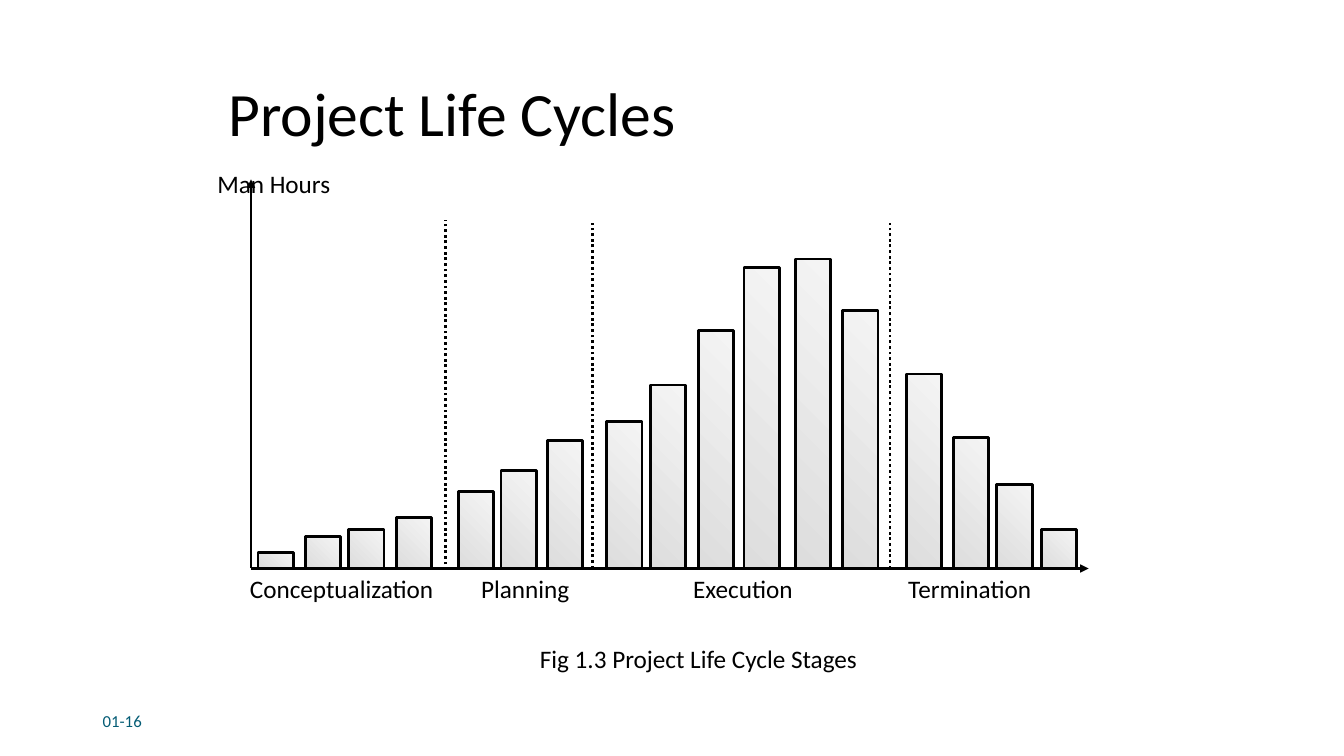
from lxml import etree
from pptx import Presentation
from pptx import util as u
from pptx.dml.color import RGBColor
from pptx.enum import dml, shapes, text
from pptx.oxml.ns import qn

COLORS = {"ink": "000000", "number": "045C75", "dark": "DDDDDD", "light": "F4F4F4"}
COLUMNS, ROWS = 40, 22.5
BASE = 16.92
AXIS_X, AXIS_END, AXIS_TOP = 7.47, 32.4, 5.34
BAR_WIDTH = 1.05
LEFT, CENTER = text.PP_ALIGN.LEFT, text.PP_ALIGN.CENTER

STAGES = [
    ("Conceptualization", 7.14, LEFT,
     [(7.68, 0.48), (9.09, 0.96), (10.38, 1.17), (11.79, 1.53)]),
    ("Planning", 12.33, CENTER,
     [(13.65, 2.28), (14.91, 2.91), (16.29, 3.8)]),
    ("Execution", 18.81, CENTER,
     [(18.06, 4.38), (19.35, 5.46), (20.79, 7.08),
      (22.14, 8.97), (23.67, 9.21), (25.08, 7.68)]),
    ("Termination", 25.56, CENTER,
     [(26.97, 5.79), (28.38, 3.9), (29.67, 2.49), (30.99, 1.17)]),
]
DIVIDERS = [(13.26, 16.8, 6.54), (17.64, BASE, 6.63), (26.49, BASE, 6.63)]


class Deck:
    """Draws styled elements on a slide, with lengths in grid columns and rows."""

    def __init__(self, font="Calibri", line_width=2):
        self.prs = Presentation()
        self.prs.slide_width, self.prs.slide_height = u.Inches(13.33), u.Inches(7.5)
        self.font, self.line_width = font, u.Pt(line_width)
        self.s = self.prs.slides.add_slide(self.prs.slide_layouts[6])

    def color(self, name):
        return RGBColor.from_string(COLORS[name])

    def grid(self, *lengths):
        cells = (self.prs.slide_width / COLUMNS, self.prs.slide_height / ROWS)
        return [round(n * cells[i % 2]) for i, n in enumerate(lengths)]

    def outline(self, sp):
        sp.line.color.rgb = self.color("ink")
        sp.line.width = self.line_width

    def label(self, words, x, y, w=6.6, h=1.2, size=18, color="ink",
              align=LEFT, anchor=text.MSO_ANCHOR.TOP, spacing=1.0):
        tf = self.s.shapes.add_textbox(*self.grid(x, y, w, h)).text_frame
        tf.word_wrap = True
        tf.vertical_anchor = anchor
        p = tf.paragraphs[0]
        p.text, p.alignment, p.line_spacing = words, align, spacing
        p.font.name, p.font.size = self.font, u.Pt(size)
        p.font.color.rgb = self.color(color)

    def line(self, x1, y1, x2, y2, arrow=False, dash=None):
        sp = self.s.shapes.add_connector(
            shapes.MSO_CONNECTOR.STRAIGHT, *self.grid(x1, y1, x2, y2))
        self.outline(sp)
        if dash:
            sp.line.dash_style = dash
        if arrow:
            etree.SubElement(sp.line._get_or_add_ln(), qn("a:tailEnd"), type="triangle")
        etree.SubElement(sp._element.spPr, qn("a:effectLst"))

    def bar(self, x, height):
        sp = self.s.shapes.add_shape(
            shapes.MSO_SHAPE.RECTANGLE,
            *self.grid(x, BASE - height, BAR_WIDTH, height))
        sp.shadow.inherit = False
        sp.fill.gradient()
        sp.fill.gradient_angle = 45
        for stop, name in zip(sp.fill.gradient_stops, ("dark", "light")):
            stop.color.rgb = self.color(name)
        self.outline(sp)


def main():
    deck = Deck()
    middle = text.MSO_ANCHOR.MIDDLE
    deck.label("Project Life Cycles", 6.5, 2, 27, 2.95, size=44,
               anchor=middle, spacing=0.9)
    deck.label("Man Hours", 6.17, 4.86)
    deck.line(AXIS_X, BASE, AXIS_END, BASE, arrow=True)
    deck.line(AXIS_X, BASE, AXIS_X, AXIS_TOP, arrow=True)
    for x, bottom, top in DIVIDERS:
        deck.line(x, bottom, x, top, dash=dml.MSO_LINE.ROUND_DOT)
    for name, x, align, bars in STAGES:
        deck.label(name, x, BASE, align=align)
        for bar_x, height in bars:
            deck.bar(bar_x, height)
    deck.label("Fig 1.3 Project Life Cycle Stages", 12.84, 18.99, 15.9, align=CENTER)
    deck.label("01-16", 2.76, 20.85, 9, size=12, color="number", anchor=middle)
    deck.prs.save("out.pptx")


if __name__ == "__main__":
    main()
